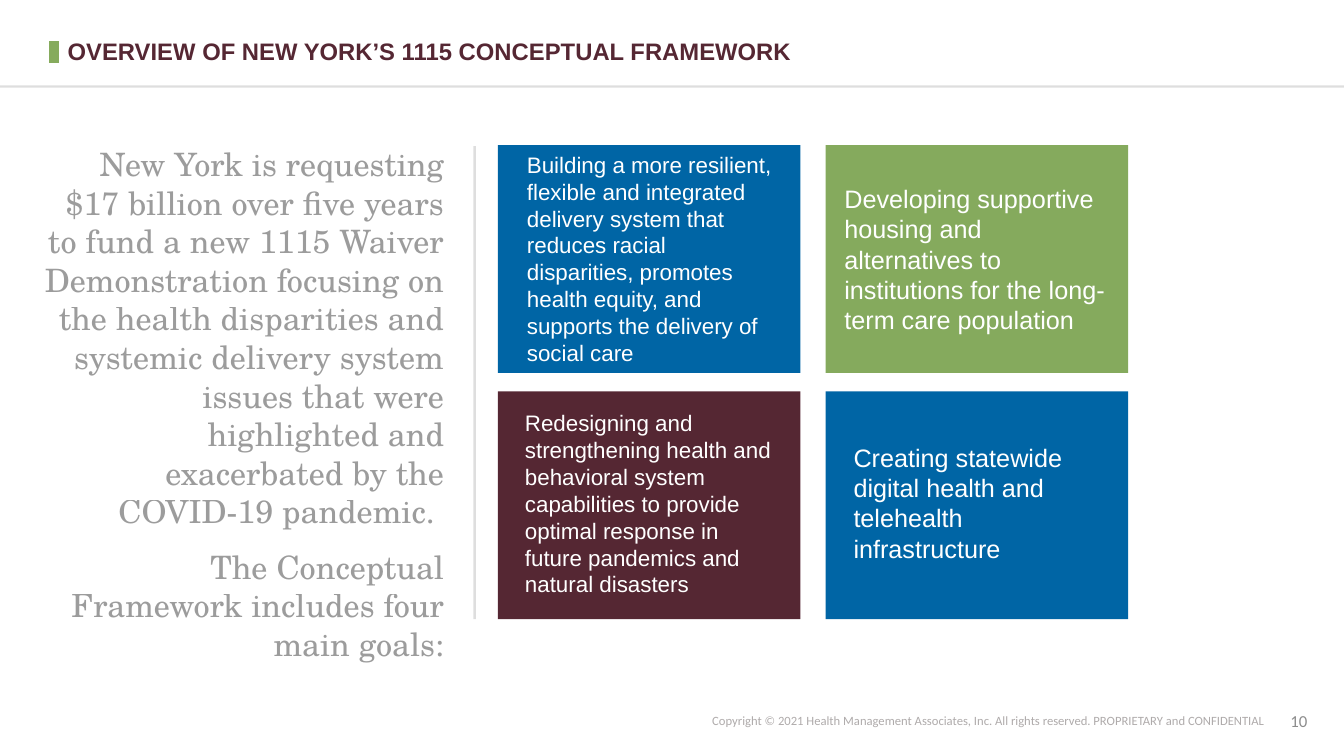
import pptx
import pptx.dml.color
import pptx.enum.shapes
import pptx.enum.text
import pptx.oxml.ns
import pptx.oxml.xmlchemy
import pptx.util
from pptx.util import Cm

RGBColor = pptx.dml.color.RGBColor
PP_ALIGN = pptx.enum.text.PP_ALIGN
MSO_ANCHOR = pptx.enum.text.MSO_ANCHOR

BLACK = RGBColor(0x00, 0x00, 0x00)
WHITE = RGBColor(0xFF, 0xFF, 0xFF)
BLUE = RGBColor(0x00, 0x65, 0xA5)
GREEN = RGBColor(0x85, 0xAA, 0x5D)
TICK_GREEN = RGBColor(0x86, 0xAB, 0x5D)
MAROON = RGBColor(0x55, 0x27, 0x33)
PAGE_GRAY = RGBColor(0x8C, 0x8C, 0x8C)
FOOTER_GRAY = RGBColor(0xAF, 0xAB, 0xAB)

CARD_LEFT, CARD_TOP = 12.55, 3.66
CARD_WIDTH, CARD_HEIGHT = 7.62, 5.74
COLUMN_PITCH, ROW_PITCH = 8.26, 6.2

# Fill, text size, text box (left, top, width, height in cm), text; row by row
GOALS = [
    (BLUE, 16, (13.03, 3.68, 6.73, 5.74),
     "Building a more resilient, flexible and integrated delivery system that "
     "reduces racial disparities, promotes health equity, and supports the "
     "delivery of social care"),
    (GREEN, 18, (21.03, 4.5, 7.16, 4.11),
     "Developing supportive housing and alternatives to institutions for the "
     "long-term care population"),
    (MAROON, 16, (12.98, 10.19, 6.73, 5.05),
     "Redesigning and strengthening health and behavioral system capabilities "
     "to provide optimal response in future pandemics and natural disasters"),
    (BLUE, 18, (21.26, 11.02, 6.73, 3.33),
     "Creating statewide digital health and telehealth infrastructure"),
]

INTRODUCTION = [
    "New York is requesting $17 billion over five years to fund a new 1115 "
    "Waiver Demonstration focusing on the health disparities and systemic "
    "delivery system issues that were highlighted and exacerbated by the "
    "COVID-19 pandemic. ",
    "The Conceptual Framework includes four main goals:",
]


def set_opacity(fill, percent):
    """Make a solid colour see-through; fill is the element that holds it."""
    color = next(fill.iter(pptx.oxml.ns.qn("a:srgbClr")))
    alpha = pptx.oxml.xmlchemy.OxmlElement("a:alpha")
    alpha.set("val", str(percent * 1000))
    color.append(alpha)


class SlideBuilder:
    font = "Arial"

    def __init__(self, presentation):
        self.slide = presentation.slides.add_slide(presentation.slide_layouts[5])

    def format_text(self, shape, paragraphs, size, color, font=None, bold=False,
                    align=PP_ALIGN.LEFT, anchor=MSO_ANCHOR.TOP, space_after=0,
                    opacity=None):
        frame = shape.text_frame
        frame.text = "\n".join(paragraphs)
        frame.word_wrap = True
        frame.auto_size = pptx.enum.text.MSO_AUTO_SIZE.NONE
        frame.vertical_anchor = anchor
        for paragraph in frame.paragraphs:
            paragraph.alignment = align
            paragraph.space_after = pptx.util.Pt(space_after)
            for run in paragraph.runs:
                run.font.name = font or self.font
                run.font.size = pptx.util.Pt(size)
                run.font.bold = bold
                run.font.color.rgb = color
                if opacity:
                    set_opacity(run._r, opacity)

    def title(self, box, text, size, color):
        shape = self.slide.shapes.title
        shape.left, shape.top, shape.width, shape.height = map(Cm, box)
        self.format_text(shape, [text], size, color, bold=True)

    def text(self, box, paragraphs, size, color, **style):
        shape = self.slide.shapes.add_textbox(*map(Cm, box))
        self.format_text(shape, paragraphs, size, color, **style)

    def rectangle(self, box, color):
        shape = self.slide.shapes.add_shape(
            pptx.enum.shapes.MSO_SHAPE.RECTANGLE, *map(Cm, box))
        shape.shadow.inherit = False
        shape.fill.solid()
        shape.fill.fore_color.rgb = color
        shape.line.fill.background()

    def line(self, ends, color, width, opacity=None):
        """Draw a straight line; ends is x1, y1, x2, y2 in cm."""
        connector = self.slide.shapes.add_connector(
            pptx.enum.shapes.MSO_CONNECTOR.STRAIGHT, *map(Cm, ends))
        connector.line.color.rgb = color
        connector.line.width = pptx.util.Pt(width)
        properties = connector._element.spPr
        if opacity:
            set_opacity(properties, opacity)
        properties.append(pptx.oxml.xmlchemy.OxmlElement("a:effectLst"))


def main():
    presentation = pptx.Presentation()
    presentation.slide_width = Cm(33.87)
    presentation.slide_height = Cm(19.05)
    builder = SlideBuilder(presentation)

    builder.title((1.45, 0.81, 20.19, 0.99),
                  "OVERVIEW OF NEW YORK’S 1115 CONCEPTUAL FRAMEWORK", 17, MAROON)
    builder.line((1.37, 1.04, 1.37, 1.6), TICK_GREEN, 7)
    builder.line((0, 2.18, 33.87, 2.18), BLACK, 1.75, opacity=12)

    builder.text((0.86, 3.51, 10.59, 11.51), INTRODUCTION, 23, BLACK,
                 font="TeX Gyre Schola", align=PP_ALIGN.RIGHT, space_after=12,
                 opacity=38)
    builder.line((11.96, 3.68, 11.96, 15.6), BLACK, 1.75, opacity=12)

    for index, (color, size, text_box, text) in enumerate(GOALS):
        row, column = divmod(index, 2)
        builder.rectangle((CARD_LEFT + column * COLUMN_PITCH,
                           CARD_TOP + row * ROW_PITCH,
                           CARD_WIDTH, CARD_HEIGHT), color)
        builder.text(text_box, [text], size, WHITE)

    builder.text((17.7, 17.83, 14.58, 0.64),
                 ["Copyright © 2021 Health Management Associates, Inc. "
                  "All rights reserved. PROPRIETARY and CONFIDENTIAL"],
                 9, FOOTER_GRAY, font="Calibri")
    builder.text((27.48, 17.65, 5.72, 1.02), ["10"], 12, PAGE_GRAY, font="Calibri",
                 align=PP_ALIGN.RIGHT, anchor=MSO_ANCHOR.MIDDLE)

    presentation.save("out.pptx")


if __name__ == "__main__":
    main()
